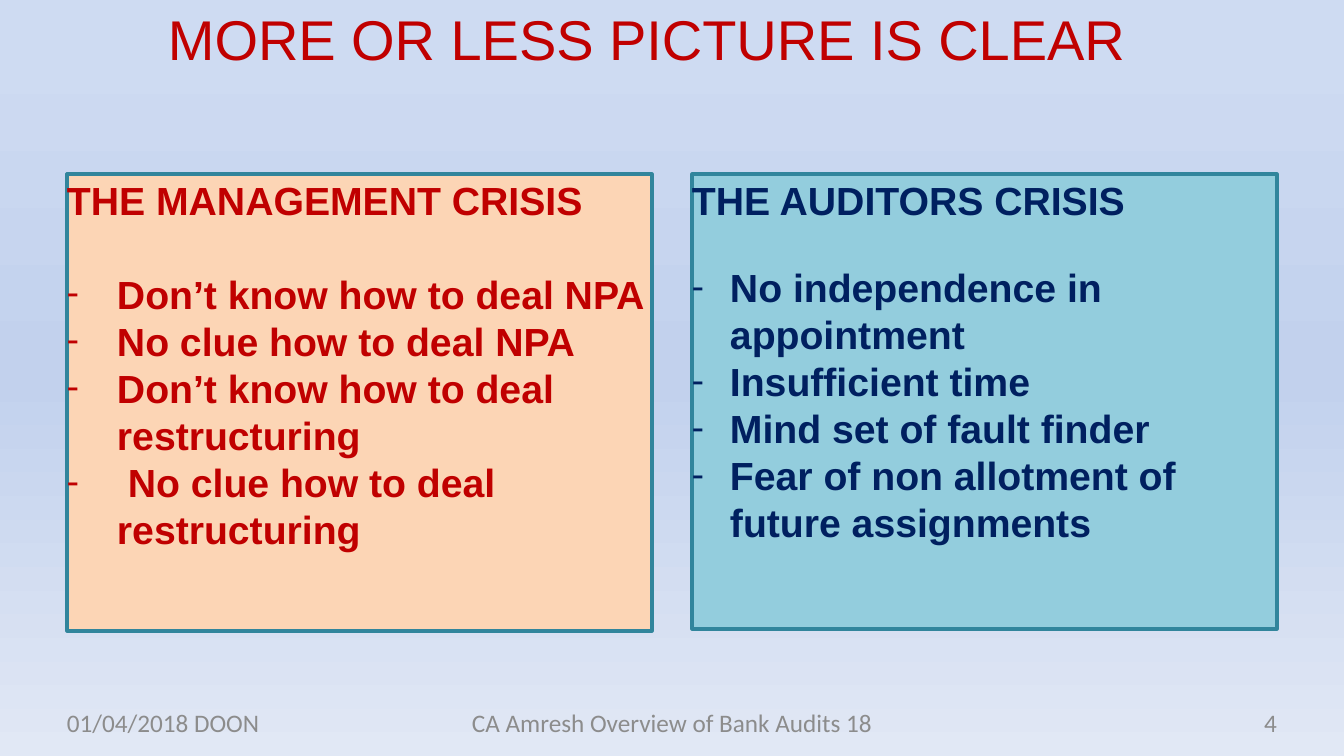
from copy import deepcopy

from lxml import etree
from pptx import Presentation
from pptx.dml.color import RGBColor
from pptx.enum.shapes import MSO_SHAPE
from pptx.enum.text import MSO_ANCHOR, PP_ALIGN
from pptx.oxml.ns import qn
from pptx.util import Pt

EMU_PER_PX = 914400 / 100.8
RECTANGLE = MSO_SHAPE.RECTANGLE
TOP, MIDDLE = MSO_ANCHOR.TOP, MSO_ANCHOR.MIDDLE
LEFT, CENTER, RIGHT = PP_ALIGN.LEFT, PP_ALIGN.CENTER, PP_ALIGN.RIGHT


def px(*lengths):
    return [round(length * EMU_PER_PX) for length in lengths]


def write(shape, lines, size, font, color, bold=False, align=LEFT, anchor=TOP, inset_top=0):
    frame = shape.text_frame
    frame.word_wrap = True
    frame.vertical_anchor = anchor
    frame.margin_left = frame.margin_right = frame.margin_bottom = 0
    frame.margin_top = px(inset_top)[0]
    frame.text = "\n".join(lines)
    for paragraph in frame.paragraphs:
        paragraph.alignment = align
        run_font = paragraph.runs[0].font
        run_font.name, run_font.size, run_font.bold = font, Pt(size), bold
        run_font.color.rgb = RGBColor.from_string(color)
    return frame.paragraphs


presentation = Presentation()
presentation.slide_width, presentation.slide_height = px(1344, 756)
slide = presentation.slides.add_slide(presentation.slide_layouts[6])

# Background: three-stop gradient from top to bottom
background = slide.background.fill
background.gradient()
background.gradient_angle = 270
stop_list = slide.element.find(".//" + qn("a:gsLst"))
stop_list.append(deepcopy(stop_list[-1]))
gradient = [(0.05, "CEDBF2"), (0.5, "C2D1ED"), (1, "E1E8F5")]
for stop, (position, color) in zip(background.gradient_stops, gradient):
    stop.position = position
    stop.color.rgb = RGBColor.from_string(color)

# Title
title = slide.shapes.add_textbox(*px(168, 0, 1008, 67))
write(title, ["MORE OR LESS PICTURE IS CLEAR"], 40, "Arial", "C00000", inset_top=5)

# Crisis panels: left, height, fill, text colour, indent, gap below heading, lines
panels = [
    (67, 457, "FCD5B5", "C00000", 50, 33.6, [
        "THE MANAGEMENT CRISIS",
        "Don’t know how to deal NPA",
        "No clue how to deal NPA",
        "Don’t know how to deal restructuring",
        " No clue how to deal restructuring",
    ]),
    (692, 455, "93CDDD", "002060", 38, 28.8, [
        "THE AUDITORS CRISIS",
        "No independence in appointment",
        "Insufficient time",
        "Mind set of fault finder",
        "Fear of non allotment of future assignments",
    ]),
]
for left, height, fill, color, indent, gap, lines in panels:
    panel = slide.shapes.add_shape(RECTANGLE, *px(left, 174, 585, height))
    panel.shadow.inherit = False
    panel.fill.solid()
    panel.fill.fore_color.rgb = RGBColor.from_string(fill)
    panel.line.color.rgb = RGBColor.from_string("31859C")
    panel.line.width = Pt(2.25)
    heading, *items = write(panel, lines, 28, "Arial", color, bold=True, inset_top=2)
    heading.line_spacing = Pt(33.6)
    heading.space_after = Pt(gap)
    for item in items:
        item.line_spacing = Pt(33.6)
        properties = item._p.get_or_add_pPr()
        indent_emu = px(indent)[0]
        properties.set("marL", str(indent_emu))
        properties.set("indent", str(-indent_emu))
        etree.SubElement(properties, qn("a:buFont"), typeface="Calibri")
        etree.SubElement(properties, qn("a:buChar"), char="-")

# Footer: date, event and slide number
footers = [
    (67, 309, LEFT, "01/04/2018 DOON"),
    (457, 430, CENTER, "CA Amresh Overview of Bank Audits 18"),
    (968, 309, RIGHT, "4"),
]
for left, width, align, text in footers:
    footer = slide.shapes.add_textbox(*px(left, 703, width, 38))
    write(footer, [text], 18, "Calibri", "8C8C8C", align=align, anchor=MIDDLE)

presentation.save("out.pptx")
